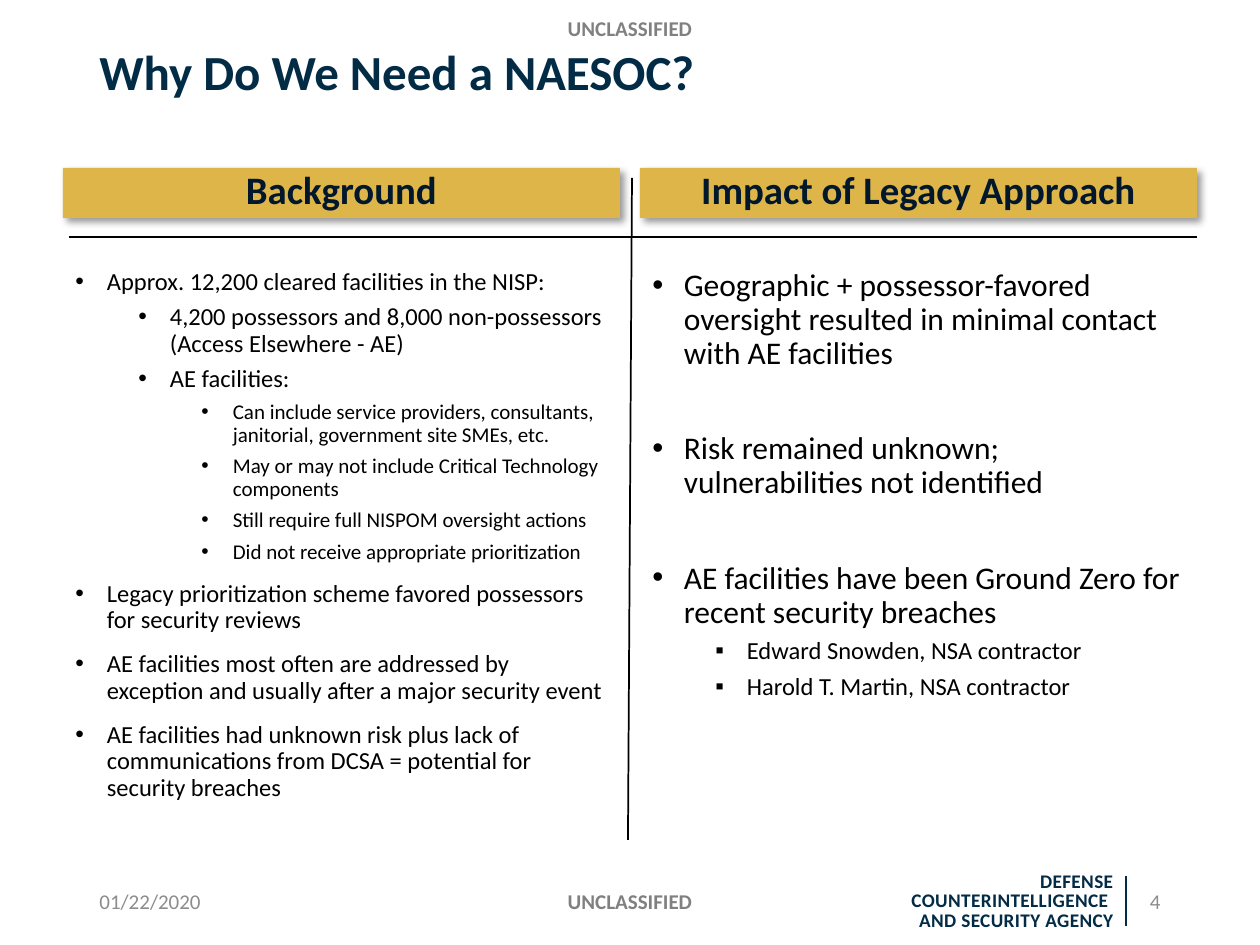
from lxml.etree import SubElement
from pptx import Presentation
from pptx.dml.color import RGBColor
from pptx.enum.shapes import MSO_CONNECTOR, MSO_SHAPE
from pptx.enum.text import MSO_ANCHOR, PP_ALIGN
from pptx.oxml import parse_xml
from pptx.oxml.ns import nsdecls, qn
from pptx.util import Pt

SCALE = 914400 / 126  # EMU per px
NAVY, INK, GOLD = "022B46", "00172C", "DEB549"
BLACK, GREY, PALE = "000000", "808080", "8C8C8C"
LEFT, CENTER, RIGHT = PP_ALIGN.LEFT, PP_ALIGN.CENTER, PP_ALIGN.RIGHT
TOP, MIDDLE, BOTTOM = MSO_ANCHOR.TOP, MSO_ANCHOR.MIDDLE, MSO_ANCHOR.BOTTOM

SHADOW = f"""<a:effectLst {nsdecls("a")}>
  <a:outerShdw blurRad="{Pt(4)}" dist="{Pt(3)}" dir="2700000" algn="tl" rotWithShape="0">
    <a:srgbClr val="{BLACK}"><a:alpha val="40000"/></a:srgbClr>
  </a:outerShdw>
</a:effectLst>"""


def px(*lengths):
    return [round(length * SCALE) for length in lengths]


def color(value):
    return RGBColor.from_string(value)


class SlideWriter:
    def __init__(self, page, font):
        self.page = page
        self.font = font

    def span(self, para, text, size, ink, bold=False):
        span = para.add_run()
        span.text = text
        span.font.name = self.font
        span.font.size = Pt(size)
        span.font.bold = bold
        span.font.color.rgb = color(ink)
        return span

    def frame(self, place, anchor=TOP):
        frame = self.page.shapes.add_textbox(*px(*place)).text_frame
        frame.word_wrap = True
        frame.vertical_anchor = anchor
        return frame

    def label(self, place, text, size, ink, bold=False, align=LEFT,
              anchor=MIDDLE, spacing=1.0):
        para = self.frame(place, anchor).paragraphs[0]
        para.alignment = align
        para.line_spacing = spacing
        self.span(para, text, size, ink, bold)

    def agency(self, place, lines, size):
        para = self.frame(place).paragraphs[0]
        para.alignment = RIGHT
        para.line_spacing = Pt(size)
        for index, line in enumerate(lines):
            if index:
                para.add_line_break()
            span = self.span(para, line, size, NAVY, True)
            span.font._element.set("spc", "20")

    def banner(self, place, text):
        box = self.page.shapes.add_shape(MSO_SHAPE.RECTANGLE, *px(*place))
        box.fill.solid()
        box.fill.fore_color.rgb = color(GOLD)
        box.line.fill.background()
        box._element.spPr.append(parse_xml(SHADOW))
        box.text_frame.word_wrap = True
        box.text_frame.vertical_anchor = TOP
        para = box.text_frame.paragraphs[0]
        para.alignment = CENTER
        para.line_spacing = 0.8
        self.span(para, text, 22.2, INK, True)

    def bullets(self, place, items):
        """Each item is level, size, space before, bullet sign, text."""
        frame = self.frame(place)
        for index, (level, size, before, sign, text) in enumerate(items):
            para = frame.add_paragraph() if index else frame.paragraphs[0]
            para.level = level
            props = para._p.get_or_add_pPr()
            props.set("marL", str(228600 + 457200 * level))
            props.set("indent", "-228600")
            SubElement(props, qn("a:buFont"), typeface="Arial")
            SubElement(props, qn("a:buChar"), char=sign)
            para.line_spacing = 0.9
            para.space_before = Pt(before if index else 0)
            self.span(para, text, size, BLACK)

    def line(self, ends, ink, width):
        line = self.page.shapes.add_connector(MSO_CONNECTOR.STRAIGHT, *px(*ends))
        line.line.color.rgb = color(ink)
        line.line.width = Pt(width)
        SubElement(line._element.spPr, qn("a:effectLst"))


BACKGROUND = [
    (0, 14, 0, "•", "Approx. 12,200 cleared facilities in the NISP:"),
    (1, 14, 5, "•", "4,200 possessors and 8,000 non-possessors (Access Elsewhere - AE)"),
    (1, 14, 5, "•", "AE facilities:"),
    (2, 12, 5, "•", "Can include service providers, consultants, janitorial, "
                    "government site SMEs, etc."),
    (2, 12, 5, "•", "May or may not include Critical Technology components"),
    (2, 12, 5, "•", "Still require full NISPOM oversight actions"),
    (2, 12, 5, "•", "Did not receive appropriate prioritization"),
    (0, 14, 10, "•", "Legacy prioritization scheme favored possessors for security reviews"),
    (0, 14, 10, "•", "AE facilities most often are addressed by exception and usually "
                     "after a major security event"),
    (0, 14, 10, "•", "AE facilities had unknown risk plus lack of communications from "
                     "DCSA = potential for security breaches"),
]
IMPACT = [
    (0, 18, 0, "•", "Geographic + possessor-favored oversight resulted in minimal "
                    "contact with AE facilities"),
    (0, 18, 35, "•", "Risk remained unknown; vulnerabilities not identified"),
    (0, 18, 35, "•", "AE facilities have been Ground Zero for recent security breaches"),
    (1, 14, 5, "▪", "Edward Snowden, NSA contractor"),
    (1, 14, 5, "▪", "Harold T. Martin, NSA contractor"),
]


def main():
    deck = Presentation()
    deck.slide_width, deck.slide_height = px(1260, 945)
    writer = SlideWriter(deck.slides.add_slide(deck.slide_layouts[6]), "Calibri")

    # Agency name and footer
    writer.line((1126, 876, 1126, 926), NAVY, 1.5)
    writer.agency((861, 867, 265, 72),
                  ["DEFENSE COUNTERINTELLIGENCE ", "AND SECURITY AGENCY"], 11)
    writer.label((87, 876, 283, 50), "01/22/2020", 12, PALE)
    writer.label((417, 876, 426, 50), "UNCLASSIFIED", 12, GREY, True, CENTER)
    writer.label((890, 876, 283, 50), "4", 12, PALE, align=RIGHT)

    # Marking and title
    writer.label((417, 0, 426, 47), "UNCLASSIFIED", 12, GREY, True, CENTER, BOTTOM, 0.9)
    writer.label((87, 33, 992, 74), "Why Do We Need a NAESOC?", 28, NAVY, True,
                 anchor=BOTTOM, spacing=0.9)

    # Two columns
    columns = [(63, "Background", BACKGROUND),
               (640, "Impact of Legacy Approach", IMPACT)]
    for left, heading, items in columns:
        writer.banner((left, 168, 557, 50), heading)
        writer.bullets((left, 263, 557, 596), items)

    # Dividers
    writer.line((632, 178, 628, 840), BLACK, 1)
    writer.line((69, 237, 1197, 237), BLACK, 1)

    deck.save("out.pptx")


if __name__ == "__main__":
    main()
